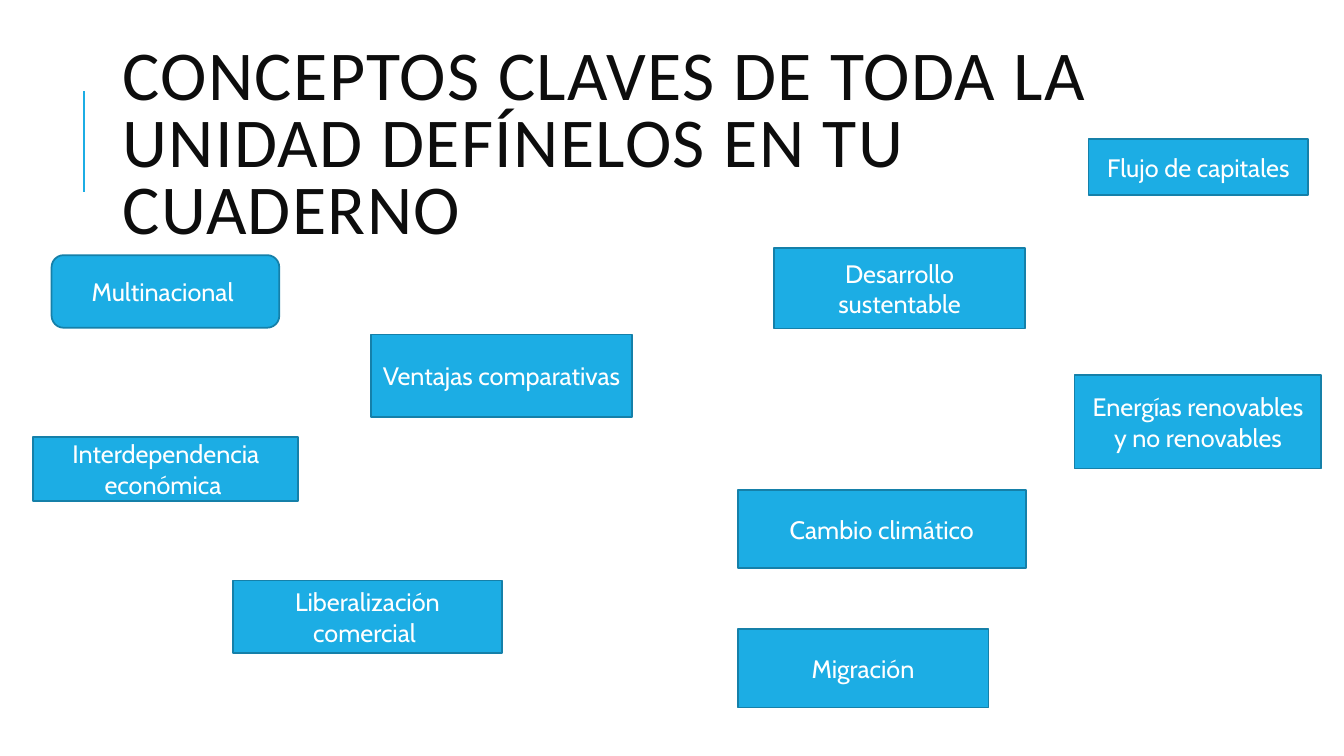
from dataclasses import dataclass

from lxml import etree
from pptx import Presentation
from pptx.dml.color import RGBColor
from pptx.enum import shapes, text
from pptx.oxml import ns
from pptx.util import Cm, Pt


@dataclass(frozen=True)
class Theme:
    """Colours, fonts and type sizes of the slide."""
    accent: RGBColor = RGBColor(0x1C, 0xAD, 0xE4)
    border: RGBColor = RGBColor(0x15, 0x80, 0xA9)
    ink: RGBColor = RGBColor(0x0D, 0x0D, 0x0D)
    paper: RGBColor = RGBColor(0xFF, 0xFF, 0xFF)
    title_font: str = "Calibri"
    body_font: str = "Cabin"
    title_size: Pt = Pt(50)
    body_size: Pt = Pt(18)


THEME = Theme()
RECT = shapes.MSO_SHAPE.RECTANGLE
ROUNDED = shapes.MSO_SHAPE.ROUNDED_RECTANGLE

CONCEPTS = [
    ("Multinacional ", ROUNDED, (1.3, 6.43, 5.74, 1.83)),
    ("Ventajas comparativas ", RECT, (9.35, 8.43, 6.58, 2.08)),
    ("Desarrollo sustentable", RECT, (19.51, 6.25, 6.32, 2.03)),
    ("Interdependencia económica ", RECT, (0.84, 11.02, 6.68, 1.6)),
    ("Liberalización comercial ", RECT, (5.87, 14.63, 6.78, 1.83)),
    ("Migración", RECT, (18.59, 15.85, 6.32, 1.98)),
    ("Flujo de capitales", RECT, (27.43, 3.51, 5.54, 1.4)),
    ("Cambio climático", RECT, (18.59, 12.34, 7.26, 1.98)),
    ("Energías renovables y no renovables", RECT, (27.08, 9.45, 6.22, 2.36)),
]


def write(sp, words, font, size, color):
    """Put one formatted, vertically centred paragraph in a shape and return it."""
    tf = sp.text_frame
    tf.text = words
    tf.word_wrap = True
    tf.vertical_anchor = text.MSO_ANCHOR.MIDDLE
    p = tf.paragraphs[0]
    f = p.runs[0].font
    f.name, f.size, f.color.rgb = font, size, color
    return p


def add_title(s, words, box):
    """Add the slide title with tight lines and spaced letters."""
    sp = s.shapes.add_textbox(*map(Cm, box))
    p = write(sp, words, THEME.title_font, THEME.title_size, THEME.ink)
    p.line_spacing = 0.8
    p.runs[0]._r.get_or_add_rPr().set("spc", "100")


def add_rule(s, x, top, bottom):
    """Add the vertical accent line beside the title."""
    line = s.shapes.add_connector(
        shapes.MSO_CONNECTOR.STRAIGHT, Cm(x), Cm(bottom), Cm(x), Cm(top))
    line.line.color.rgb = THEME.accent
    line.line.width = Pt(1.5)
    etree.SubElement(line._element.spPr, ns.qn("a:effectLst"))


def add_concept(s, words, kind, box):
    """Add one concept box with its centred label."""
    sp = s.shapes.add_shape(kind, *map(Cm, box))
    sp.shadow.inherit = False
    sp.fill.solid()
    sp.fill.fore_color.rgb = THEME.accent
    sp.line.color.rgb = THEME.border
    sp.line.width = Pt(1.25)
    p = write(sp, words, THEME.body_font, THEME.body_size, THEME.paper)
    p.alignment = text.PP_ALIGN.CENTER


def main():
    """Build the slide of key concepts and save it."""
    prs = Presentation()
    prs.slide_width, prs.slide_height = Cm(33.87), Cm(19.05)
    s = prs.slides.add_slide(prs.slide_layouts[6])
    add_rule(s, 2.12, 2.29, 4.83)
    add_title(s, "CONCEPTOS CLAVES DE TODA LA UNIDAD DEFÍNELOS EN TU CUADERNO",
              (2.84, 1.63, 27, 4.17))
    for words, kind, box in CONCEPTS:
        add_concept(s, words, kind, box)
    prs.save("out.pptx")


if __name__ == "__main__":
    main()
